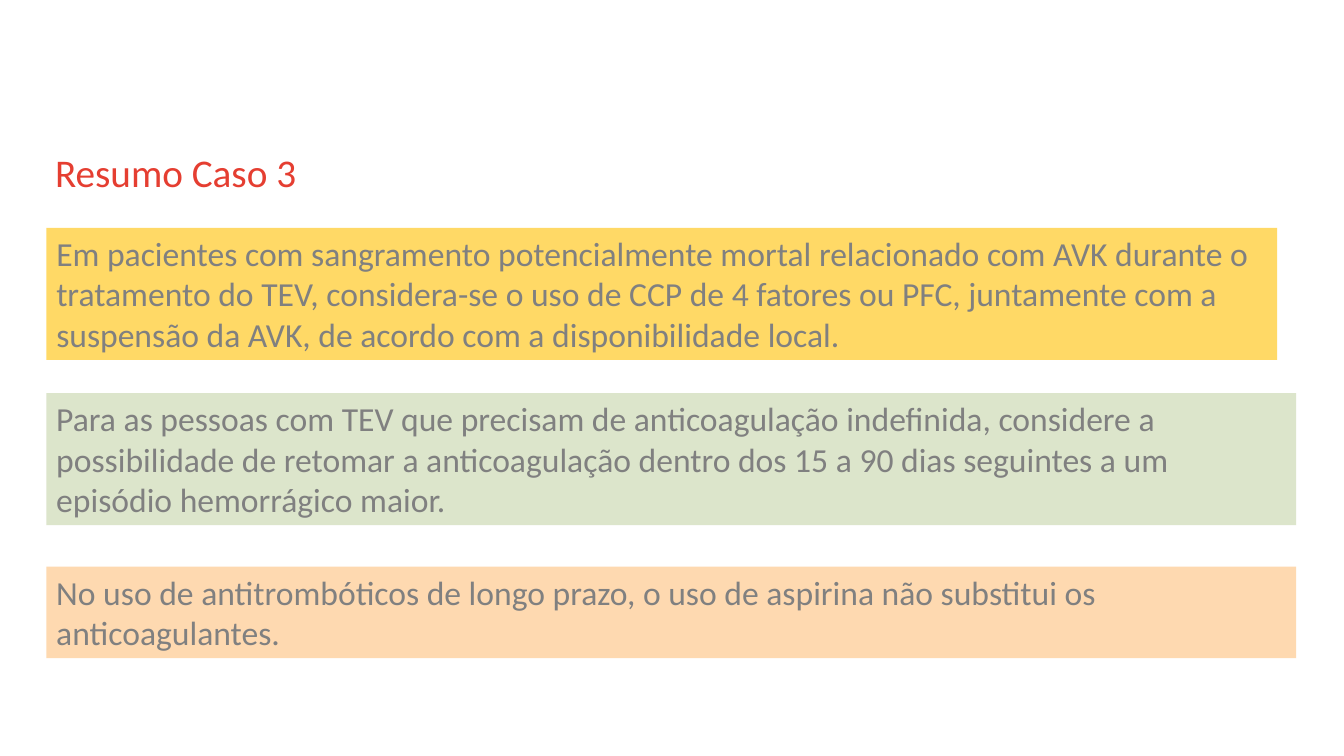
from dataclasses import dataclass

from lxml import etree
from pptx import Presentation
from pptx.dml.color import RGBColor
from pptx.enum import shapes, text
from pptx.oxml import ns
from pptx.util import Pt

RED = RGBColor(0xE5, 0x3E, 0x31)
GREY = RGBColor(0x80, 0x80, 0x80)
YELLOW = RGBColor(0xFF, 0xD9, 0x66)
GREEN = RGBColor(0xC9, 0xD7, 0xAF)
PEACH = RGBColor(0xFE, 0xD9, 0xB0)

FONT_NAME = "Calibri"
LEFT = Pt(33.12)


@dataclass
class Message:
    wording: str
    top: float
    width: float
    height: float
    colour: RGBColor
    opacity: int = 100


MESSAGES = [
    Message(
        "Em pacientes com sangramento potencialmente mortal relacionado com AVK "
        "durante o tratamento do TEV, considera-se o uso de CCP de 4 fatores ou PFC, "
        "juntamente com a suspensão da AVK, de acordo com a disponibilidade local.",
        162.72, 879.12, 94.32, YELLOW),
    Message(
        "Para as pessoas com TEV que precisam de anticoagulação indefinida, considere "
        "a possibilidade de retomar a anticoagulação dentro dos 15 a 90 dias seguintes "
        "a um episódio hemorrágico maior.",
        280.8, 892.8, 94.32, GREEN, 64),
    Message(
        "No uso de antitrombóticos de longo prazo, o uso de aspirina não substitui os "
        "anticoagulantes.",
        404.64, 892.8, 65.52, PEACH),
]


def write(box, wording: str, size: float, colour: RGBColor, frame_format: dict) -> None:
    """Put one left-aligned paragraph into a box."""
    frame = box.text_frame
    frame.text = wording
    frame_format = {"word_wrap": True, "vertical_anchor": text.MSO_ANCHOR.TOP} | frame_format
    for name, value in frame_format.items():
        setattr(frame, name, value)
    para = frame.paragraphs[0]
    para.alignment = text.PP_ALIGN.LEFT
    for name, value in {"name": FONT_NAME, "size": Pt(size)}.items():
        setattr(para.runs[0].font, name, value)
    para.runs[0].font.color.rgb = colour


def add_message(page, message: Message) -> None:
    """Draw one coloured panel with its text."""
    box = page.shapes.add_shape(
        shapes.MSO_SHAPE.RECTANGLE, LEFT, Pt(message.top),
        Pt(message.width), Pt(message.height))
    box.shadow.inherit = False
    box.line.fill.background()
    box.fill.solid()
    box.fill.fore_color.rgb = message.colour
    if message.opacity < 100:
        colour = box.fill._xPr.find(ns.qn("a:solidFill"))[0]
        etree.SubElement(colour, ns.qn("a:alpha"), val=str(message.opacity * 1000))
    write(box, message.wording, 24, GREY,
          {"auto_size": text.MSO_AUTO_SIZE.SHAPE_TO_FIT_TEXT})


def main() -> None:
    deck = Presentation()
    deck.slide_width, deck.slide_height = Pt(960), Pt(540)
    page = deck.slides.add_slide(deck.slide_layouts[5])

    # Title
    title = page.shapes.title
    place = {"left": LEFT, "top": Pt(105.84), "width": Pt(864), "height": Pt(56.16)}
    for name, value in place.items():
        setattr(title, name, value)
    write(title, "Resumo Caso 3", 28, RED, {
        "auto_size": text.MSO_AUTO_SIZE.NONE,
        "margin_left": Pt(6.3), "margin_top": 0, "margin_right": 0, "margin_bottom": 0})

    # Summary panels
    for message in MESSAGES:
        add_message(page, message)

    deck.save("out.pptx")


if __name__ == "__main__":
    main()
